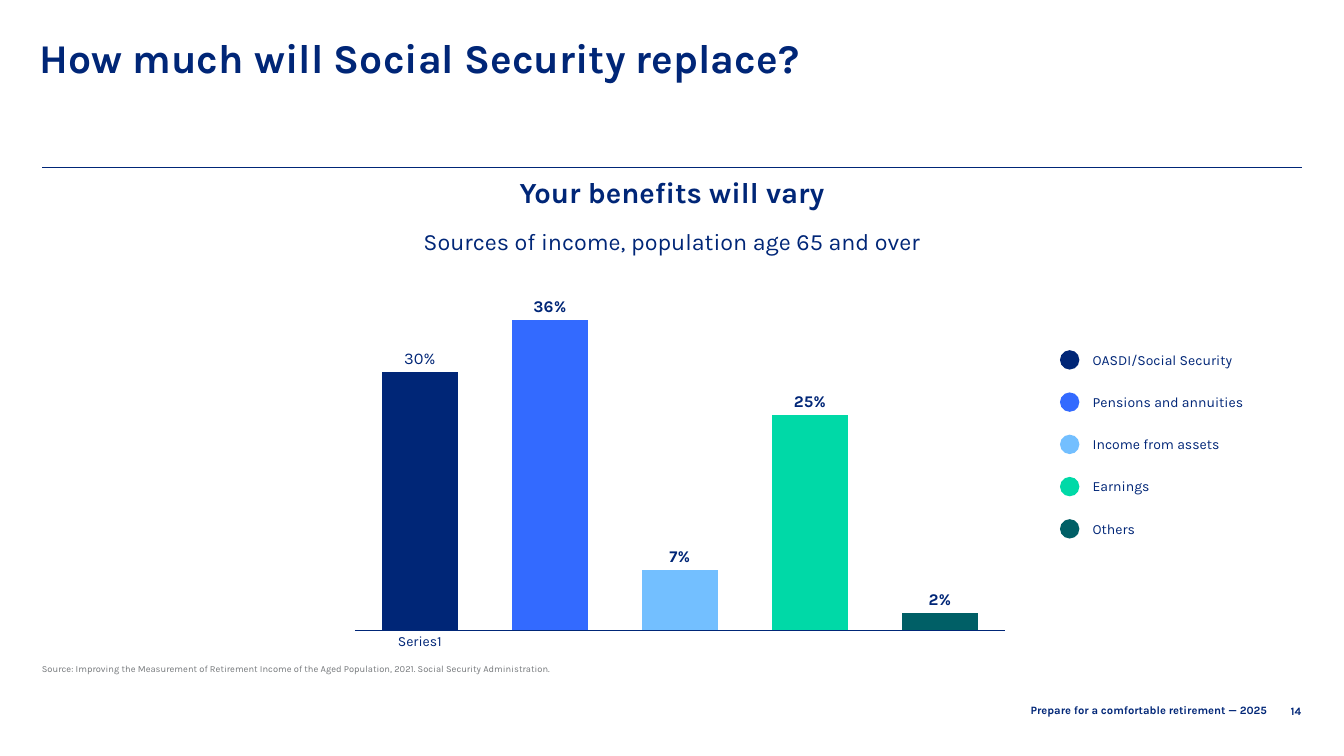
from lxml import etree
from pptx import Presentation
from pptx.chart.data import CategoryChartData
from pptx.dml.color import RGBColor
from pptx.enum import chart as ch, shapes, text
from pptx.oxml import parse_xml
from pptx.oxml.ns import nsdecls, qn
from pptx.util import Pt

NAVY = RGBColor(0x00, 0x26, 0x77)
BLUE = RGBColor(0x33, 0x6A, 0xFF)
SKY = RGBColor(0x73, 0xBF, 0xFF)
GREEN = RGBColor(0x00, 0xD9, 0xA7)
TEAL = RGBColor(0x00, 0x5F, 0x66)
GREY = RGBColor(0x75, 0x78, 0x7B)

SOURCES = [
    ("OASDI/Social Security", 30, NAVY),
    ("Pensions and annuities", 36, BLUE),
    ("Income from assets", 7, SKY),
    ("Earnings", 25, GREEN),
    ("Others", 2, TEAL),
]


def set_font(font, size, bold=False, color=NAVY):
    font.name = "Karla"
    font.size = Pt(size)
    font.bold = bold
    font.color.rgb = color


def add_text(box, words, size, bold=False, color=NAVY, align=text.PP_ALIGN.LEFT):
    """Add a one-paragraph text box; box is left, top, width, height in points."""
    shape = slide.shapes.add_textbox(*map(Pt, box))
    frame = shape.text_frame
    frame.word_wrap = True
    paragraph = frame.paragraphs[0]
    paragraph.text = words
    paragraph.alignment = align
    set_font(paragraph.font, size, bold, color)
    return frame


presentation = Presentation()
presentation.slide_width = Pt(1152)
presentation.slide_height = Pt(648)
slide = presentation.slides.add_slide(presentation.slide_layouts[1])

# Title and subtitle
title, body = slide.placeholders
title.left, title.top, title.width, title.height = map(Pt, (26.6, 26, 1089.4, 75.6))
frame = title.text_frame
frame.text = "How much will Social Security replace?"
frame.margin_top = Pt(14.4)
frame.vertical_anchor = text.MSO_ANCHOR.TOP
frame.auto_size = text.MSO_AUTO_SIZE.NONE
paragraph = frame.paragraphs[0]
paragraph.alignment = text.PP_ALIGN.LEFT
paragraph.line_spacing = Pt(30)
set_font(paragraph.font, 35, True)

body.left, body.top, body.width, body.height = map(Pt, (36, 149, 1080, 75))
frame = body.text_frame
frame.text = "Your benefits will vary\nSources of income, population age 65 and over"
frame.auto_size = text.MSO_AUTO_SIZE.NONE
styles = [(25, True, 0.9, 0), (20, False, Pt(23), 16)]
for paragraph, (size, bold, spacing, before) in zip(frame.paragraphs, styles):
    properties = paragraph._p.get_or_add_pPr()
    properties.set("marL", "0")
    properties.set("indent", "0")
    etree.SubElement(properties, qn("a:buNone"))
    paragraph.alignment = text.PP_ALIGN.CENTER
    paragraph.line_spacing = spacing
    paragraph.space_before = Pt(before)
    set_font(paragraph.font, size, bold)

rule = slide.shapes.add_connector(
    shapes.MSO_CONNECTOR.STRAIGHT, Pt(36), Pt(143.3), Pt(1116), Pt(143.3))
rule.line.color.rgb = NAVY
rule.line.width = Pt(0.5)
etree.SubElement(rule._element.spPr, qn("a:effectLst"))

# Income chart
data = CategoryChartData(number_format='0"%"')
data.categories = ["Series1", "", "", "", ""]
data.add_series("Series 1", [value for _, value, _ in SOURCES])
chart = slide.shapes.add_chart(
    ch.XL_CHART_TYPE.COLUMN_CLUSTERED,
    Pt(291.6), Pt(236.2), Pt(570.2), Pt(329.8), data).chart
chart.has_legend = False
chart.has_title = False
set_font(chart.font, 12)

value_axis = chart.value_axis
value_axis.minimum_scale = 0
value_axis.maximum_scale = 40
value_axis.has_major_gridlines = False
value_axis.visible = False
category_axis = chart.category_axis
category_axis.major_tick_mark = ch.XL_TICK_MARK.NONE
category_axis.format.line.color.rgb = NAVY
category_axis.format.line.width = Pt(0.5)
set_font(category_axis.tick_labels.font, 12)

plot = chart.plots[0]
plot.gap_width = 70
plot.overlap = -17
plot.vary_by_categories = False
series = plot.series[0]
for index, (_, _, color) in enumerate(SOURCES):
    point = series.points[index]
    point.format.fill.solid()
    point.format.fill.fore_color.rgb = color
    set_font(point.data_label.font, 14, index > 0)
    point.data_label.position = ch.XL_LABEL_POSITION.OUTSIDE_END

plot_area = chart._chartSpace.chart.plotArea
for layout in plot_area.findall(qn("c:layout")):
    plot_area.remove(layout)
plot_area.insert(0, parse_xml(
    f'<c:layout {nsdecls("c")}><c:manualLayout><c:layoutTarget val="inner"/>'
    '<c:xMode val="edge"/><c:yMode val="edge"/><c:x val="0.022"/><c:y val="0.027"/>'
    '<c:w val="0.978"/><c:h val="0.895"/></c:manualLayout></c:layout>'))

# Legend
for index, (name, _, color) in enumerate(SOURCES):
    offset = index * 36.2
    dot = slide.shapes.add_shape(
        shapes.MSO_SHAPE.OVAL, Pt(908.6), Pt(300.2 + offset), Pt(16.6), Pt(16.6))
    dot.shadow.inherit = False
    dot.fill.solid()
    dot.fill.fore_color.rgb = color
    dot.line.fill.background()
    add_text((929.5, 297.4 + offset, 194.4, 21.8), name, 12)

# Source and footer
frame = add_text(
    (28.8, 558, 722.9, 20.2),
    "Source: Improving the Measurement of Retirement Income of the Aged Population, "
    "2021. Social Security Administration.", 8, color=GREY)
frame.margin_bottom = 0
frame.vertical_anchor = text.MSO_ANCHOR.BOTTOM
frame.paragraphs[0].line_spacing = Pt(10)

frame = add_text((704.2, 599.8, 388.8, 17.3), "Prepare for a comfortable retirement — 2025",
                 9.6, True, align=text.PP_ALIGN.RIGHT)
frame.vertical_anchor = text.MSO_ANCHOR.MIDDLE
add_text((1093.7, 599.8, 28.8, 13.7), "14", 9.6, True, align=text.PP_ALIGN.RIGHT)

presentation.save("out.pptx")
